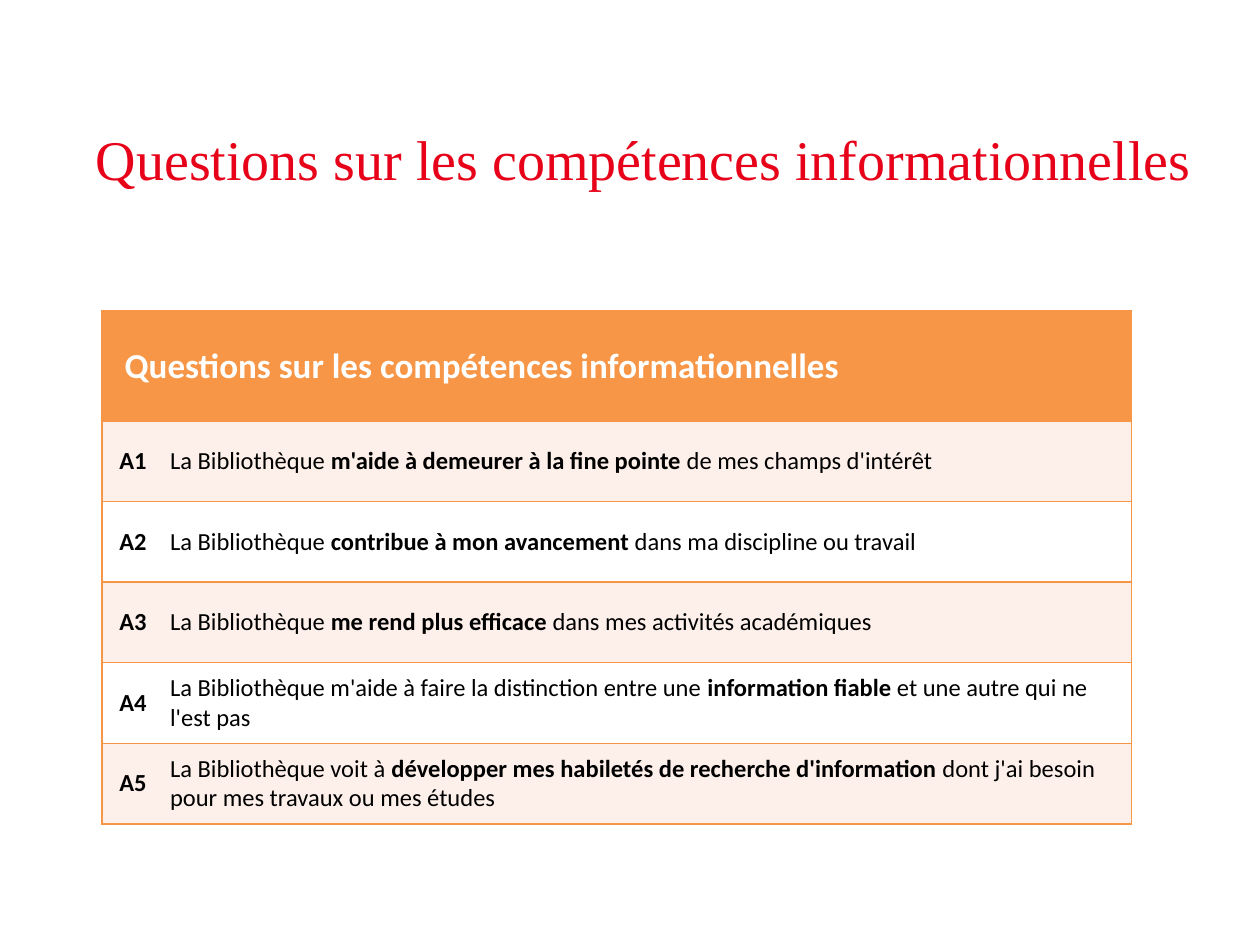
"""Build a slide with a title and a table of survey questions."""
from lxml.etree import SubElement
from pptx import Presentation
from pptx.dml.color import RGBColor
from pptx.enum.text import MSO_ANCHOR as ANCHOR, MSO_AUTO_SIZE as AUTO, PP_ALIGN as ALIGN
from pptx.oxml.ns import qn
from pptx.util import Inches, Pt

COLORS = {"title": "E7021A", "accent": "F79646", "band": "FDEFE9",
          "white": "FFFFFF", "text": "000000"}
HEADING = "Questions sur les compétences informationnelles"
QUESTIONS = [
    ("La Bibliothèque ", "m'aide à demeurer à la fine pointe ", "de mes champs d'intérêt"),
    ("La Bibliothèque ", "contribue à mon avancement", " dans ma discipline ou travail"),
    ("La Bibliothèque ", "me rend plus efficace ", "dans mes activités académiques"),
    ("La Bibliothèque m'aide à faire la distinction entre une ", "information fiable ",
     "et une autre qui ne l'est pas"),
    ("La Bibliothèque voit à ", "développer mes habiletés de recherche d'information ",
     "dont j'ai besoin pour mes travaux ou mes études"),
]


def rgb(name):
    return RGBColor.from_string(COLORS[name])


def style_run(r, font, size, color, bold=False):
    r.font.name = font
    r.font.size = Pt(size)
    r.font.bold = bold
    r.font.color.rgb = rgb(color)


def add_title(s):
    sp = s.shapes.title
    sp.left, sp.top, sp.width, sp.height = map(Inches, (0.66, 0.87, 9.08, 0.94))
    tf = sp.text_frame
    tf.text = HEADING
    tf.auto_size = AUTO.NONE
    tf.vertical_anchor = ANCHOR.TOP
    tf.margin_top = Inches(0.12)
    p = tf.paragraphs[0]
    p.alignment = ALIGN.LEFT
    style_run(p.runs[0], "Times New Roman", 32, "title")


def set_borders(cell, sides):
    tcPr = cell._tc.get_or_add_tcPr()
    for side in "LRTB":
        ln = SubElement(tcPr, qn(f"a:ln{side}"), w=str(Pt(1)))
        if side in sides:
            fill = SubElement(ln, qn("a:solidFill"))
            SubElement(fill, qn("a:srgbClr"), val=COLORS["accent"])
        else:
            SubElement(ln, qn("a:noFill"))


def fill_cell(cell, parts, sides, fill, size=14, color="text", align=ALIGN.LEFT, indent=0.05):
    set_borders(cell, sides)
    cell.fill.solid()
    cell.fill.fore_color.rgb = rgb(fill)
    cell.vertical_anchor = ANCHOR.MIDDLE
    cell.margin_left, cell.margin_right = Inches(indent), Inches(0.05)
    cell.margin_top = cell.margin_bottom = 0
    p = cell.text_frame.paragraphs[0]
    p.alignment = align
    for text, bold in parts:
        r = p.add_run()
        r.text = text
        style_run(r, "Calibri", size, color, bold)


def add_questions(s):
    table = s.shapes.add_table(len(QUESTIONS) + 1, 2, Inches(0.81), Inches(2.47),
                               Inches(8.17), Inches(4.08)).table
    for col, width in zip(table.columns, (0.49, 7.68)):
        col.width = Inches(width)
    for i, row in enumerate(table.rows):
        row.height = Inches(0.64 if i else 0.87)
    header = table.cell(0, 0)
    header.merge(table.cell(0, 1))
    fill_cell(header, [(HEADING, True)], "LRTB", "accent", 20, "white", indent=0.18)
    for i, parts in enumerate(QUESTIONS, 1):
        fill = "band" if i % 2 else "white"
        fill_cell(table.cell(i, 0), [(f"A{i}", True)], "LTB", fill, align=ALIGN.CENTER)
        fill_cell(table.cell(i, 1), zip(parts, (False, True, False)), "RTB", fill)


def main():
    prs = Presentation()
    prs.slide_width, prs.slide_height = Inches(10), Inches(7.5)
    s = prs.slides.add_slide(prs.slide_layouts[5])
    add_title(s)
    add_questions(s)
    prs.save("out.pptx")


if __name__ == "__main__":
    main()
